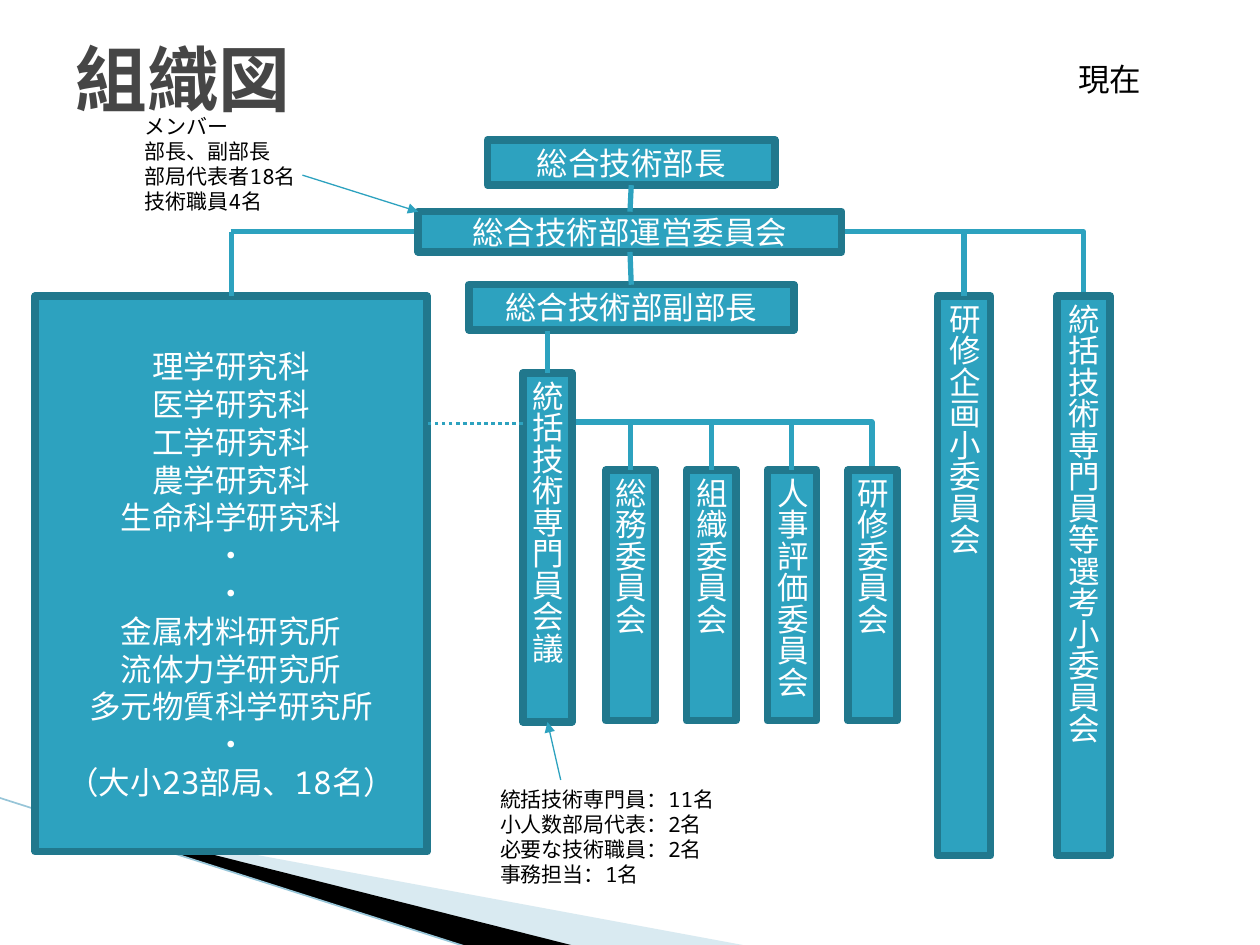
"""Build the organisation chart slide of a general technical department."""
from lxml import etree
from pptx import Presentation
from pptx.dml.color import RGBColor
from pptx.enum.dml import MSO_LINE
from pptx.enum.shapes import MSO_CONNECTOR, MSO_SHAPE
from pptx.enum.text import MSO_ANCHOR, PP_ALIGN
from pptx.oxml.ns import qn
from pptx.util import Inches, Pt

STRAIGHT, ELBOW = MSO_CONNECTOR.STRAIGHT, MSO_CONNECTOR.ELBOW
RECT, DOTTED = MSO_SHAPE.RECTANGLE, MSO_LINE.ROUND_DOT
MIDDLE, LEFT, CENTER = MSO_ANCHOR.MIDDLE, PP_ALIGN.LEFT, PP_ALIGN.CENTER
TOP, BOTTOM = 0, 2
FONT = "Noto Sans Mono"
COLORS = {
    "fill": "2DA2BF", "border": "21788D", "title": "464646", "white": "FFFFFF",
    "black": "000000", "pale": "A0CBDC", "edge": "97C5D8",
}
COLORS = {name: RGBColor.from_string(value) for name, value in COLORS.items()}

prs = Presentation()
prs.slide_width, prs.slide_height = Inches(10), Inches(7.5)
s = prs.slides.add_slide(prs.slide_layouts[6])
COL, ROW = prs.slide_width / 100, prs.slide_height / 75


def write(sp, lines, size, color, align=LEFT, bold=False):
    tf = sp.text_frame
    for i, text in enumerate(lines):
        p = tf.paragraphs[0] if i == 0 else tf.add_paragraph()
        p.alignment = align
        r = p.add_run()
        r.text = text
        r.font.name, r.font.size, r.font.bold = FONT, Pt(size), bold
        r.font.color.rgb = COLORS[color]
        etree.SubElement(r.font._element, qn("a:ea")).set("typeface", FONT)


def connect(x1, y1, x2, y2, weight=3, color="fill", kind=STRAIGHT, arrow=False):
    cx = s.shapes.add_connector(
        kind, int(x1 * COL), int(y1 * ROW), int(x2 * COL), int(y2 * ROW))
    cx.line.color.rgb, cx.line.width = COLORS[color], Pt(weight)
    pr = cx._element.spPr
    if kind == ELBOW:
        pr.find(qn("a:prstGeom")).set("prst", "bentConnector2")
    if arrow:
        etree.SubElement(cx.line._get_or_add_ln(), qn("a:tailEnd")).set("type", "triangle")
    etree.SubElement(pr, qn("a:effectLst"))
    return cx


wedges = [
    ("pale", [(5.5, 65.1), (59.5, 75.1), (45.6, 75.1), (5.5, 65)]),
    ("black", [(5.3, 64.9), (45.7, 75.1), (37.2, 75.2), (5.4, 65)]),
]
for color, points in wedges:
    corners = [(int(x * COL), int(y * ROW)) for x, y in points]
    fb = s.shapes.build_freeform(*corners[0], scale=1.0)
    fb.add_line_segments(corners[1:], close=True)
    sp = fb.convert_to_shape()
    sp.shadow.inherit = False
    sp.line.fill.background()
    sp.fill.solid()
    sp.fill.fore_color.rgb = COLORS[color]
    if color == "pale":
        rgb = sp._element.spPr.find(qn("a:solidFill"))[0]
        etree.SubElement(rgb, qn("a:alpha")).set("val", "40000")
connect(-0.1, 63.3, 37.2, 75.2, 0.95, "edge")

connect(43.5, 33.5, 69.2, 37.4, kind=ELBOW)
connect(18.3, 18.4, 86, 23.5, kind=ELBOW)

departments = [
    "理学研究科", "医学研究科", "工学研究科", "農学研究科", "生命科学研究科", "・", "・",
    "金属材料研究所", "流体力学研究所", "多元物質科学研究所", "・", "（大小23部局、18名）",
]
boxes = [
    ("chief", 38.7, 11.1, 22.8, 3.6, ["総合技術部長"]),
    ("board", 33.2, 16.8, 33.6, 3.2, ["総合技術部運営委員会"]),
    ("deputy", 37.2, 22.6, 25.8, 3.6, ["総合技術部副部長"]),
    ("departments", 2.8, 23.5, 31.1, 44.1, departments),
    ("council", 41.5, 29.6, 3.9, 27.7, ["統括技術専門員会議"]),
]
committees = ["総務委員会", "組織委員会", "人事評価委員会", "研修委員会"]
for i, name in enumerate(committees):
    boxes.append((name, 48.1 + 6.4 * i, 37.3, 3.9, 19.9, [name]))
subcommittees = ["研修企画小委員会", "統括技術専門員等選考小委員会"]
for i, name in enumerate(subcommittees):
    boxes.append((name, 74.4 + 9.5 * i, 23.5, 4.2, 44.4, [name]))

nodes = {}
for key, x, y, w, h, lines in boxes:
    sp = s.shapes.add_shape(RECT, int(x * COL), int(y * ROW), int(w * COL), int(h * ROW))
    sp.shadow.inherit = False
    sp.fill.solid()
    sp.fill.fore_color.rgb = COLORS["fill"]
    sp.line.color.rgb, sp.line.width = COLORS["border"], Pt(4.33)
    tf = sp.text_frame
    tf.word_wrap, tf.vertical_anchor = True, MIDDLE
    tf.margin_left = tf.margin_right = Inches(0.12)
    tf.margin_top = tf.margin_bottom = Inches(0.06)
    vertical = w < 5
    if vertical:
        tf._txBody.bodyPr.set("vert", "eaVert")
    write(sp, lines, 18, "white", LEFT if vertical else CENTER)
    nodes[key] = sp

for upper, lower in [("chief", "board"), ("board", "deputy")]:
    cx = connect(50.1, 14.7, 50.1, 16.8)
    cx.begin_connect(nodes[upper], BOTTOM)
    cx.end_connect(nodes[lower], TOP)

drops = [("departments", 18.35, 18.4), ("council", 43.45, 26.3), (subcommittees[0], 76.5, 18.4)]
drops += [(name, 50.05 + 6.4 * i, 33.5) for i, name in enumerate(committees[:3])]
for key, x, y in drops:
    connect(x, y, x, y + 4).end_connect(nodes[key], TOP)

connect(41.5, 33.6, 33.8, 33.6, 2).line.dash_style = DOTTED
connect(44.5, 61.9, 43.5, 57.3, 0.75, arrow=True).end_connect(nodes["council"], BOTTOM)
connect(24, 13.9, 33.2, 16.8, 0.75, arrow=True)

council_note = ["統括技術専門員：11名", "小人数部局代表：2名", "必要な技術職員：2名", "事務担当：1名"]
board_note = ["メンバー", "部長、副部長", "部局代表者18名", "技術職員4名"]
texts = [
    (5, 1.2, 90, 9.9, ["組織図"], 41, "title"),
    (84.6, 4.3, 12.7, 4, ["現在"], 18, "black"),
    (38.7, 61.9, 19.9, 9.1, council_note, 12, "black"),
    (10.5, 8.5, 15.5, 9.1, board_note, 12, "black"),
]
for x, y, w, h, lines, size, color in texts:
    sp = s.shapes.add_textbox(int(x * COL), int(y * ROW), int(w * COL), int(h * ROW))
    heading = color == "title"
    sp.text_frame.word_wrap = heading
    if heading:
        sp.text_frame.vertical_anchor = MIDDLE
    write(sp, lines, size, color, bold=heading)

prs.save("out.pptx")
